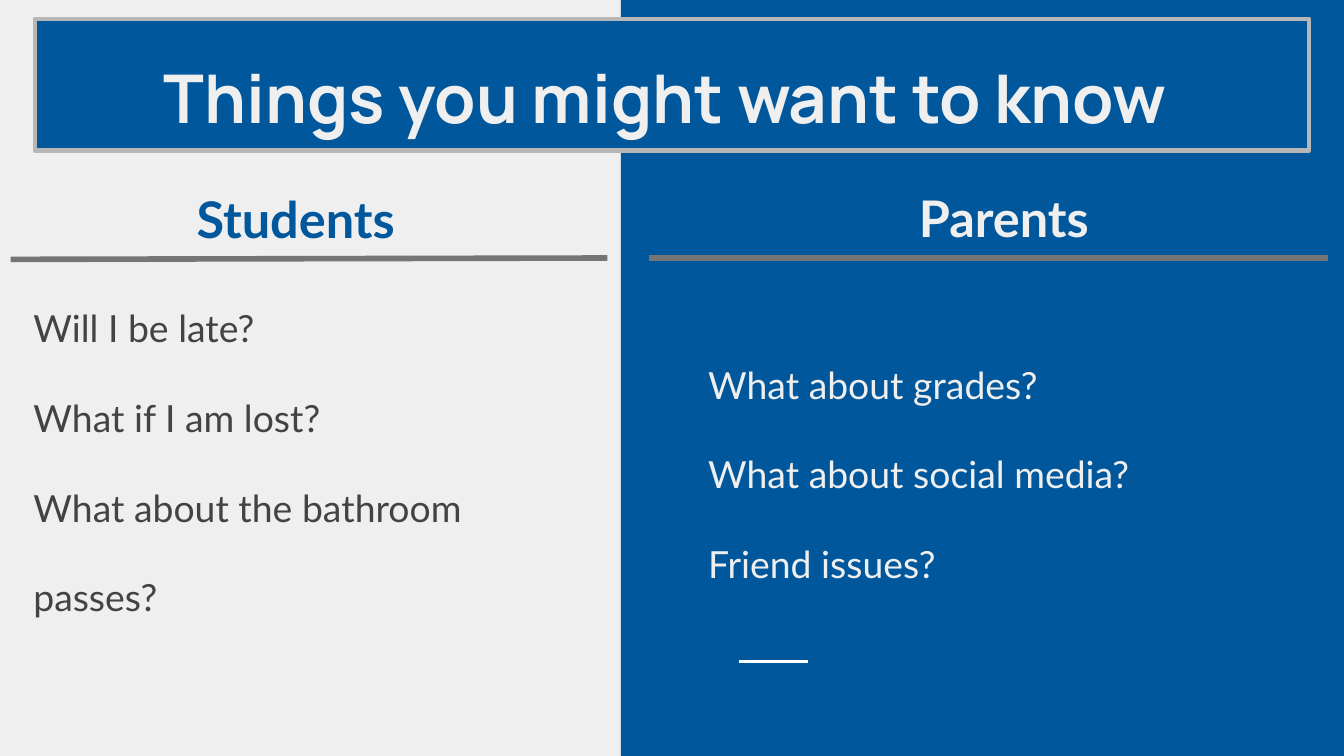
from lxml.etree import SubElement
from pptx import Presentation
from pptx.dml.color import RGBColor
from pptx.enum.shapes import MSO_CONNECTOR, MSO_SHAPE
from pptx.enum.text import MSO_ANCHOR, MSO_AUTO_SIZE, PP_ALIGN
from pptx.oxml.ns import qn
from pptx.util import Inches, Pt

BLUE, PALE, DARK = "01579B", "EFEFEF", "434343"
GREY, SILVER, WHITE = "757575", "B7B7B7", "FFFFFF"

deck = Presentation()
deck.slide_width = Inches(10)
deck.slide_height = deck.slide_width * 9 // 16
cell = deck.slide_width // 100  # square grid, 100 columns wide
slide = deck.slides.add_slide(deck.slide_layouts[5])
shapes = slide.shapes
hue = RGBColor.from_string


def write(shape, lines, size, color, font="Lato", bold=False,
          align=PP_ALIGN.LEFT, anchor=MSO_ANCHOR.TOP, space=1.0):
    frame = shape.text_frame
    frame.word_wrap = True
    frame.auto_size = MSO_AUTO_SIZE.NONE
    frame.vertical_anchor = anchor
    frame.margin_left = frame.margin_right = cell
    frame.margin_top = frame.margin_bottom = cell
    frame.text = "\n".join(lines)
    for para in frame.paragraphs:
        para.alignment = align
        para.line_spacing = space
        face = para.runs[0].font
        face.name, face.size, face.bold = font, Pt(size), bold
        face.color.rgb = hue(color)


def grid(*spans):
    return [round(span * cell) for span in spans]


# Two-tone backdrop
slide.background.fill.solid()
slide.background.fill.fore_color.rgb = hue(PALE)
split = round(46.2 * cell)
panel = shapes.add_shape(MSO_SHAPE.RECTANGLE, split, 0,
                         deck.slide_width - split, deck.slide_height)
panel.shadow.inherit = False
panel.fill.solid()
panel.fill.fore_color.rgb = hue(BLUE)
panel.line.fill.background()

# Title, brought in front of the panel
title = shapes.title
shapes.element.append(title.element)
title.left, title.top, title.width, title.height = grid(2.6, 1.4, 94.8, 9.8)
title.fill.solid()
title.fill.fore_color.rgb = hue(BLUE)
title.line.color.rgb = hue(SILVER)
title.line.width = Pt(2.25)
write(title, ["Things you might want to know "], 36, PALE, font="Manrope",
      bold=True, align=PP_ALIGN.CENTER, anchor=MSO_ANCHOR.BOTTOM)

# Columns: heading, its place and colour; questions, their place, colour, anchor
sides = [
    ("Students", (8, 13, 28, 6.3), BLUE,
     ["Will I be late?", "What if I am lost?",
      "What about the bathroom passes?"],
     (1.5, 21.1, 43.7, 23.3), DARK, MSO_ANCHOR.MIDDLE),
    ("Parents", (60.7, 12.9, 28, 6.3), PALE,
     ["What about grades?", "What about social media?", "Friend issues?"],
     (51.7, 22.6, 43.7, 22.3), PALE, MSO_ANCHOR.TOP),
]
for head, spot, tint, asks, place, ink, anchor in sides:
    write(shapes.add_textbox(*grid(*place)), asks, 20, ink,
          anchor=anchor, space=2.0)
    write(shapes.add_textbox(*grid(*spot)), [head], 27, tint,
          bold=True, align=PP_ALIGN.CENTER)

# Rules under the headings, and the short accent dash
rules = [
    ((0.8, 19.3, 45.2, 19.2), GREY, 3),
    ((48.3, 19.2, 98.8, 19.2), GREY, 3),
    ((55, 49.2, 60.1, 49.2), WHITE, 1.5),
]
for ends, tint, width in rules:
    rule = shapes.add_connector(MSO_CONNECTOR.STRAIGHT, *grid(*ends))
    rule.line.color.rgb = hue(tint)
    rule.line.width = Pt(width)
    SubElement(rule.element.spPr, qn("a:effectLst"))

deck.save("out.pptx")
